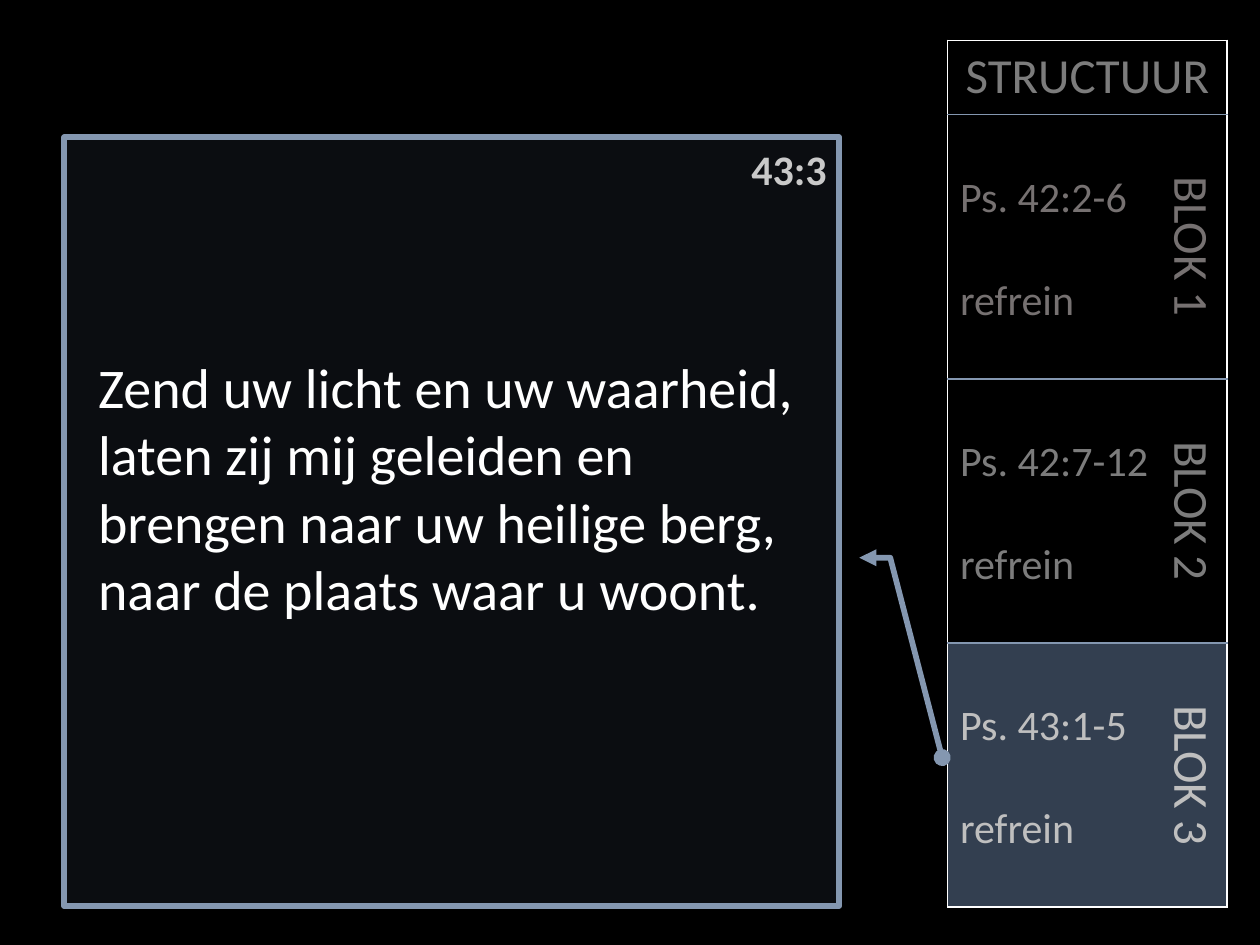
from lxml.etree import SubElement
from pptx import Presentation
from pptx.dml.color import RGBColor
from pptx.enum.shapes import MSO_SHAPE
from pptx.enum.text import MSO_ANCHOR, MSO_AUTO_SIZE, PP_ALIGN
from pptx.oxml.ns import qn
from pptx.util import Inches, Pt

HUES = {"black": "000000", "white": "FFFFFF", "blue": "8497B0", "navy": "222A35",
        "slate": "333F50", "gray": "7C7C7C", "brown": "767171",
        "light": "BFBFBF", "pale": "C9C9C9"}
BLOCKS = [("Ps. 42:2-6", "BLOK 1", "brown", "black"),
          ("Ps. 42:7-12", "BLOK 2", "gray", "black"),
          ("Ps. 43:1-5", "BLOK 3", "light", "slate")]
VERSE = ["Zend uw licht en uw waarheid,",
         "laten zij mij geleiden en brengen naar uw heilige berg,",
         "naar de plaats waar u woont."]


def hue(name):
    """Return the named colour."""
    return RGBColor.from_string(HUES[name])


def write(frame, lines, size, tint, align=PP_ALIGN.LEFT, bold=False, gap=0):
    """Fill a text frame with one paragraph per line."""
    for i, line in enumerate(lines):
        para = frame.add_paragraph() if i else frame.paragraphs[0]
        para.alignment = align
        if i and gap:
            para.space_before = Pt(gap)
        run = para.add_run()
        run.text = line
        font = run.font
        font.name, font.size, font.bold = "Calibri", Pt(size), bold
        font.color.rgb = hue(tint)


def edge(cell, side, tint):
    """Draw one cell border, or hide it when no colour is given."""
    line = SubElement(cell._tc.get_or_add_tcPr(), qn(f"a:ln{side}"), w=str(Pt(1)))
    if tint:
        fill = SubElement(line, qn("a:solidFill"))
        SubElement(fill, qn("a:srgbClr"), val=HUES[tint])
    else:
        SubElement(line, qn("a:noFill"))


def outline(slide, left, top, width, height):
    """Place the structure table with its header and three blocks."""
    head, side = 0.59, 0.45
    count = len(BLOCKS)
    table = slide.shapes.add_table(count + 1, 2, Inches(left), Inches(top),
                                   Inches(width), Inches(height)).table
    table.first_row = table.horz_banding = False
    table.columns[0].width = Inches(width - side)
    table.columns[1].width = Inches(side)
    for r, row in enumerate(table.rows):
        row.height = Inches((height - head) / count if r else head)
        for c, cell in enumerate(row.cells):
            edge(cell, "L", None if c else "white")
            edge(cell, "R", "white" if c or not r else None)
            edge(cell, "T", "blue" if r else "white")
            edge(cell, "B", "blue" if r < count else "white")
            cell.fill.solid()
            cell.fill.fore_color.rgb = hue(BLOCKS[r - 1][3] if r else "black")
    title = table.cell(0, 0)
    title.merge(table.cell(0, 1))
    write(title.text_frame, ["STRUCTUUR"], 28, "gray", PP_ALIGN.CENTER)
    for r, (psalm, block, tint, _) in enumerate(BLOCKS, 1):
        cell = table.cell(r, 0)
        cell.margin_top = Inches(0.46)
        write(cell.text_frame, [psalm, "refrein"], 24, tint, gap=29.3)
        cell = table.cell(r, 1)
        cell._tc.get_or_add_tcPr().set("vert", "vert")
        cell.vertical_anchor = MSO_ANCHOR.MIDDLE
        write(cell.text_frame, [block], 28, tint, PP_ALIGN.CENTER)


def label(slide, left, top, width, height, lines, size, tint, **style):
    """Place a wrapped text box."""
    box = slide.shapes.add_textbox(Inches(left), Inches(top),
                                   Inches(width), Inches(height))
    box.text_frame.word_wrap = True
    box.text_frame.auto_size = MSO_AUTO_SIZE.SHAPE_TO_FIT_TEXT
    write(box.text_frame, lines, size, tint, **style)


def verse(slide, left, top, width, height):
    """Place the callout with its verse number and text."""
    box = slide.shapes.add_shape(MSO_SHAPE.LINE_CALLOUT_2, Inches(left), Inches(top),
                                 Inches(width), Inches(height))
    for i, part in enumerate([0.547, 1.026, 0.547, 1.066, 0.807, 1.133]):
        box.adjustments[i] = part
    box.shadow.inherit = False
    box.fill.solid()
    box.fill.fore_color.rgb = hue("navy")
    tone = box._element.spPr.find(qn("a:solidFill"))[0]
    SubElement(tone, qn("a:alpha"), val="33000")
    box.line.color.rgb = hue("blue")
    box.line.width = Pt(3.25)
    line = box.line._get_or_add_ln()
    SubElement(line, qn("a:headEnd"), type="triangle")
    SubElement(line, qn("a:tailEnd"), type="oval")
    label(slide, left + width - 1.18, top, 1.18, 0.5, ["43:3"], 24, "pale",
          align=PP_ALIGN.RIGHT, bold=True)
    label(slide, left + 0.17, top + 1.66, width - 0.34, 2.26, VERSE, 32, "white")


def main():
    """Build and save the slide."""
    deck = Presentation()
    deck.slide_width, deck.slide_height = Inches(10), Inches(7.5)
    slide = deck.slides.add_slide(deck.slide_layouts[6])
    slide.background.fill.solid()
    slide.background.fill.fore_color.rgb = hue("black")
    outline(slide, 7.52, 0.32, 2.22, 6.88)
    verse(slide, 0.51, 1.09, 6.15, 6.1)
    deck.save("out.pptx")


if __name__ == "__main__":
    main()
